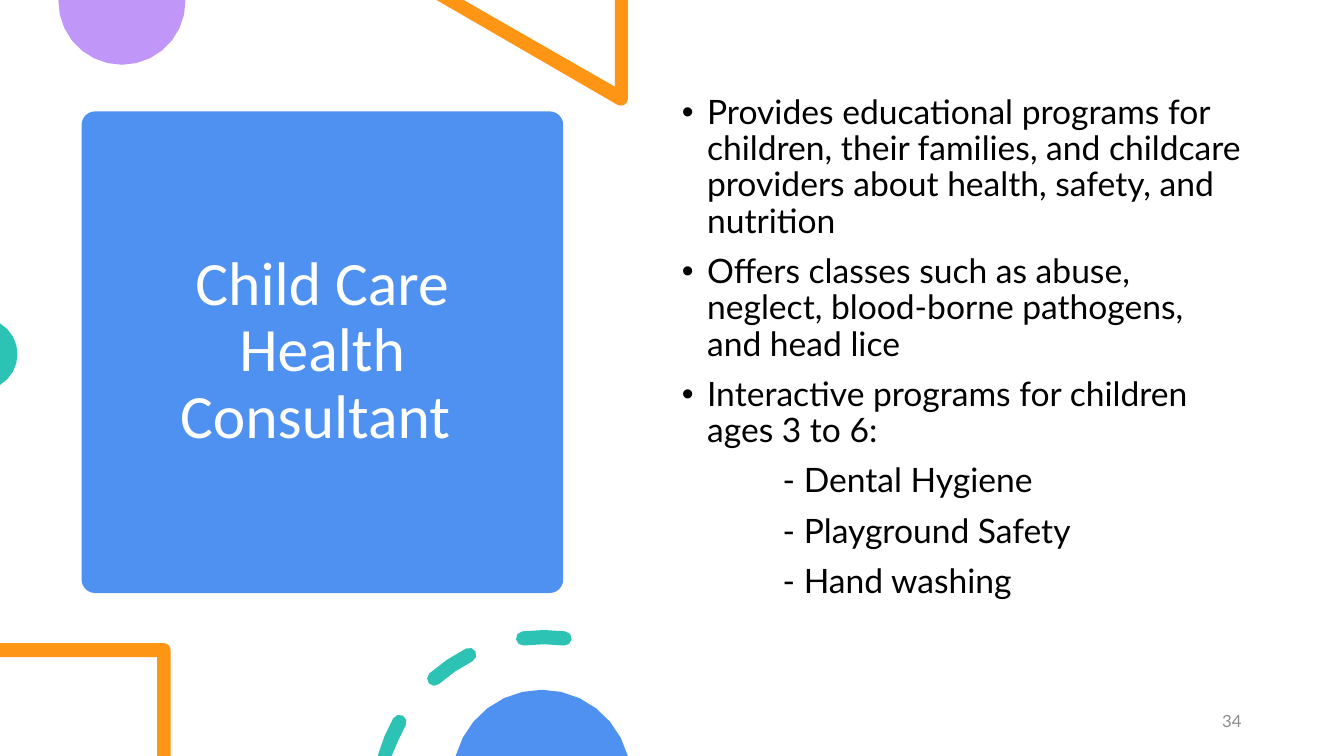
from math import cos, radians, sin
from lxml.etree import SubElement
from pptx import Presentation
from pptx.dml.color import RGBColor
from pptx.enum.shapes import MSO_SHAPE
from pptx.enum.text import MSO_ANCHOR, PP_ALIGN
from pptx.oxml.ns import qn
from pptx.util import Pt

BLUE = RGBColor(0x4E, 0x91, 0xF0)
TEAL = RGBColor(0x2C, 0xC3, 0xB4)
ORANGE = RGBColor(0xFF, 0x95, 0x14)
PURPLE = RGBColor(0xC0, 0x97, 0xF8)
WHITE = RGBColor(0xFF, 0xFF, 0xFF)
BLACK = RGBColor(0, 0, 0)
GREY = RGBColor(0x8C, 0x8C, 0x8C)
WIDE, HIGH = 960, 540

deck = Presentation()
deck.slide_width, deck.slide_height = Pt(WIDE), Pt(HIGH)
slide = deck.slides.add_slide(deck.slide_layouts[6])
shapes = slide.shapes


def arc(x, y, r, start, end, steps=4):
    """Points along an arc, cut off at the foot of the slide."""
    turns = [radians(start + (end - start) * i / steps) for i in range(steps + 1)]
    return [(x + r * cos(t), min(y + r * sin(t), HIGH)) for t in turns]


def write(items, box, font, size, color, align=PP_ALIGN.LEFT,
          anchor=MSO_ANCHOR.TOP, line=1.0, gap=0):
    """Fill a text box from (text, left margin, bullet) items."""
    frame = shapes.add_textbox(*[Pt(v) for v in box]).text_frame
    frame.word_wrap = True
    frame.vertical_anchor = anchor
    for i, (text, left, bullet) in enumerate(items):
        para = frame.paragraphs[0] if i == 0 else frame.add_paragraph()
        props = para._p.get_or_add_pPr()
        props.set("marL", str(Pt(left)))
        if bullet:
            props.set("indent", str(-Pt(left)))
            SubElement(props, qn("a:buFont"), typeface="Arial")
            SubElement(props, qn("a:buChar"), char="•")
        para.alignment = align
        para.line_spacing = line
        if i:
            para.space_before = Pt(gap)
        run = para.add_run()
        run.text = text
        run.font.name, run.font.size = font, Pt(size)
        run.font.color.rgb = color


# White ground and title card
for kind, box, color in [
    (MSO_SHAPE.RECTANGLE, (0, 0, WIDE, HIGH), WHITE),
    (MSO_SHAPE.ROUNDED_RECTANGLE, (58.3, 79.6, 344, 344), BLUE),
]:
    panel = shapes.add_shape(kind, *[Pt(v) for v in box])
    panel.shadow.inherit = False
    panel.fill.solid()
    panel.fill.fore_color.rgb = color
    panel.line.fill.background()
panel.adjustments[0] = 0.028

write([("Child Care Health Consultant ", 0, False)], (75, 87.2, 310.3, 328.3),
      "Calibri", 44, WHITE, align=PP_ALIGN.CENTER, anchor=MSO_ANCHOR.MIDDLE, line=0.9)

# Round-ended dashes along one ring
ring_x, ring_y, ring_r, half = 388.5, 573.3, 118.2, 5.1
dashes = []
for start, end in [(196, 209.2), (228.5, 243.2), (262.8, 277.2)]:
    caps = []
    for turn, spin in [(end, end), (start, start + 180)]:
        mid = radians(turn)
        caps.append(arc(ring_x + ring_r * cos(mid), ring_y + ring_r * sin(mid),
                        half, spin, spin + 180))
    dashes.append(caps[0] + arc(ring_x, ring_y, ring_r - half, end, start, 2)[1:-1]
                  + caps[1] + arc(ring_x, ring_y, ring_r + half, start, end, 2)[1:-1])

# Decorations, each a colour and its closed outlines
wedge = [(448.5, 0), (439.2, 0), (439.2, 61.9), (331.2, 0), (311.8, 0),
         *arc(443.5, 70.5, 5, 120, 0)]
corner = [(0, 459.4), *arc(117, 464.2, 4.8, -90, 0), (121.8, HIGH),
          (112.3, HIGH), (112.3, 469.4), (0, 469.4)]
decor = [
    (PURPLE, [arc(87.1, 0.9, 45.4, -1.1, 181.1, 14)]),
    (ORANGE, [wedge]),
    (TEAL, [arc(-13.2, 253, 25.7, -59, 59, 8)]),
    (ORANGE, [corner]),
    (TEAL, dashes),
    (BLUE, [arc(387, 556.3, 63.6, -165.2, -14.8, 12)]),
]
for color, outlines in decor:
    pen = None
    for outline in outlines:
        first, *rest = [(Pt(x), Pt(y)) for x, y in outline]
        if pen is None:
            pen = shapes.build_freeform(*first)
        else:
            pen.move_to(*first)
        pen.add_line_segments(rest, close=True)
    form = pen.convert_to_shape()
    form.shadow.inherit = False
    form.fill.solid()
    form.fill.fore_color.rgb = color
    form.line.fill.background()

# Body and page number
points = [
    "Provides educational programs for children, their families, "
    "and childcare providers about health, safety, and nutrition",
    "Offers classes such as abuse, neglect, blood-borne pathogens, and head lice",
    "Interactive programs for children ages 3 to 6:",
]
topics = ["- Dental Hygiene", "- Playground Safety", "- Hand washing"]
write([(p, 18, True) for p in points] + [(t, 72, False) for t in topics],
      (480, 64.6, 414, 385.2), "Lato", 24, BLACK, line=0.9, gap=10)
write([("34", 0, False)], (827, 500.4, 67, 28.8), "Lato", 12, GREY,
      align=PP_ALIGN.RIGHT, anchor=MSO_ANCHOR.MIDDLE)

deck.save("out.pptx")
